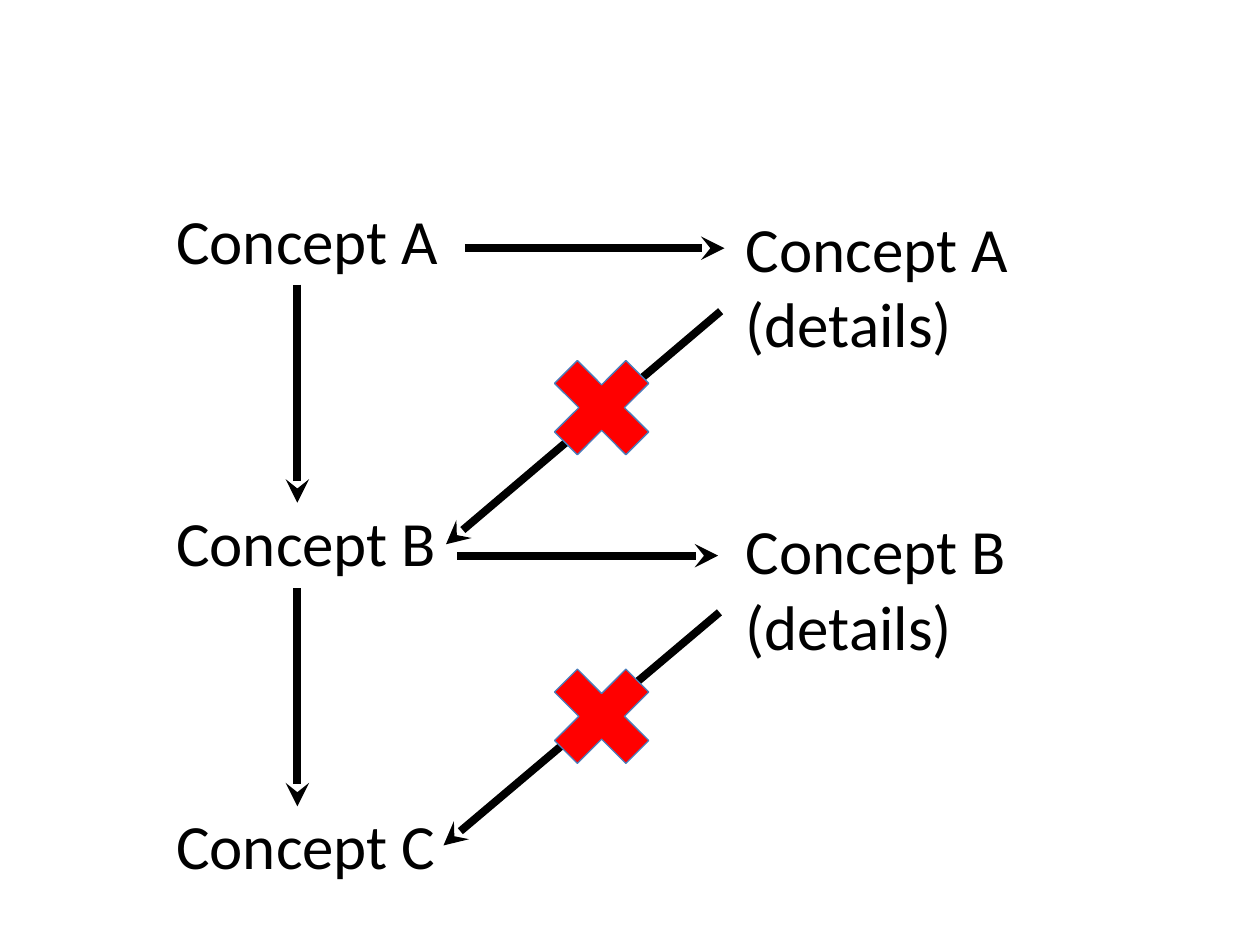
from pptx import Presentation
from pptx.dml.color import RGBColor
from pptx.enum.shapes import MSO_CONNECTOR, MSO_SHAPE
from pptx.oxml.ns import qn
from pptx.util import Inches, Pt
from lxml import etree

LINE = MSO_CONNECTOR.STRAIGHT
CROSS = MSO_SHAPE.MATH_MULTIPLY
BLACK, RED, BLUE = "000000", "FF0000", "4A7DBB"
ROW = 43.2  # height of one text line in points

# Content: each column is (left, top, height, blank lines between, entries)
columns = [
    (5.82, 1.61, 4.95, 2, ["Concept A\v(details)", "Concept B\v(details)"]),
    (1.3, 1.55, 5.55, 3, ["Concept A", "Concept B", "Concept C"]),
]
arrows = [
    (3.69, 1.97, 5.75, 1.97),  # A to its details
    (5.72, 2.47, 3.54, 4.32),  # details back to B
    (3.63, 4.41, 5.7, 4.41),   # B to its details
    (5.71, 4.86, 3.52, 6.71),  # details back to C
    (2.36, 2.26, 2.36, 3.99),  # A to B
    (2.36, 4.67, 2.36, 6.4),   # B to C
]
crosses = [(4.23, 2.69), (4.23, 5.14)]


def color(code):
    return RGBColor.from_string(code)


def add_text(slide, items, left, top, width, height, size=36, gap=0,
             font="Calibri", ink=BLACK):
    box = slide.shapes.add_textbox(*map(Inches, (left, top, width, height)))
    frame = box.text_frame
    frame.word_wrap = True
    lines = [(line, gap if i and not j else 0)
             for i, item in enumerate(items)
             for j, line in enumerate(item.split("\v"))]
    for n, (line, space) in enumerate(lines):
        para = frame.add_paragraph() if n else frame.paragraphs[0]
        para.space_before = Pt(space)
        run = para.add_run()
        run.text = line
        run.font.size = Pt(size)
        run.font.name = font
        run.font.color.rgb = color(ink)


def add_arrow(slide, ends):
    arrow = slide.shapes.add_connector(LINE, *map(Inches, ends))
    arrow.line.width = Pt(4.5)
    arrow.line.color.rgb = color(BLACK)
    ln = arrow.line._get_or_add_ln()
    etree.SubElement(ln, qn("a:tailEnd"), type="stealth")
    etree.SubElement(arrow._element.spPr, qn("a:effectLst"))


def add_cross(slide, left, top, side=1.09):
    cross = slide.shapes.add_shape(
        CROSS, *map(Inches, (left, top, side, side)))
    cross.adjustments[0] = 0.235
    cross.shadow.inherit = False
    cross.fill.solid()
    cross.fill.fore_color.rgb = color(RED)
    cross.line.color.rgb = color(BLUE)
    cross.line.width = Pt(0.75)


def main():
    deck = Presentation()
    deck.slide_width, deck.slide_height = Inches(10), Inches(7.5)
    slide = deck.slides.add_slide(deck.slide_layouts[6])

    # Concepts and their details
    for left, top, height, skip, items in columns:
        add_text(slide, items, left, top, 3.31, height, gap=skip * ROW)

    # Paths, then crosses over the barred ones
    for ends in arrows:
        add_arrow(slide, ends)
    for left, top in crosses:
        add_cross(slide, left, top)

    deck.save("out.pptx")


if __name__ == "__main__":
    main()
